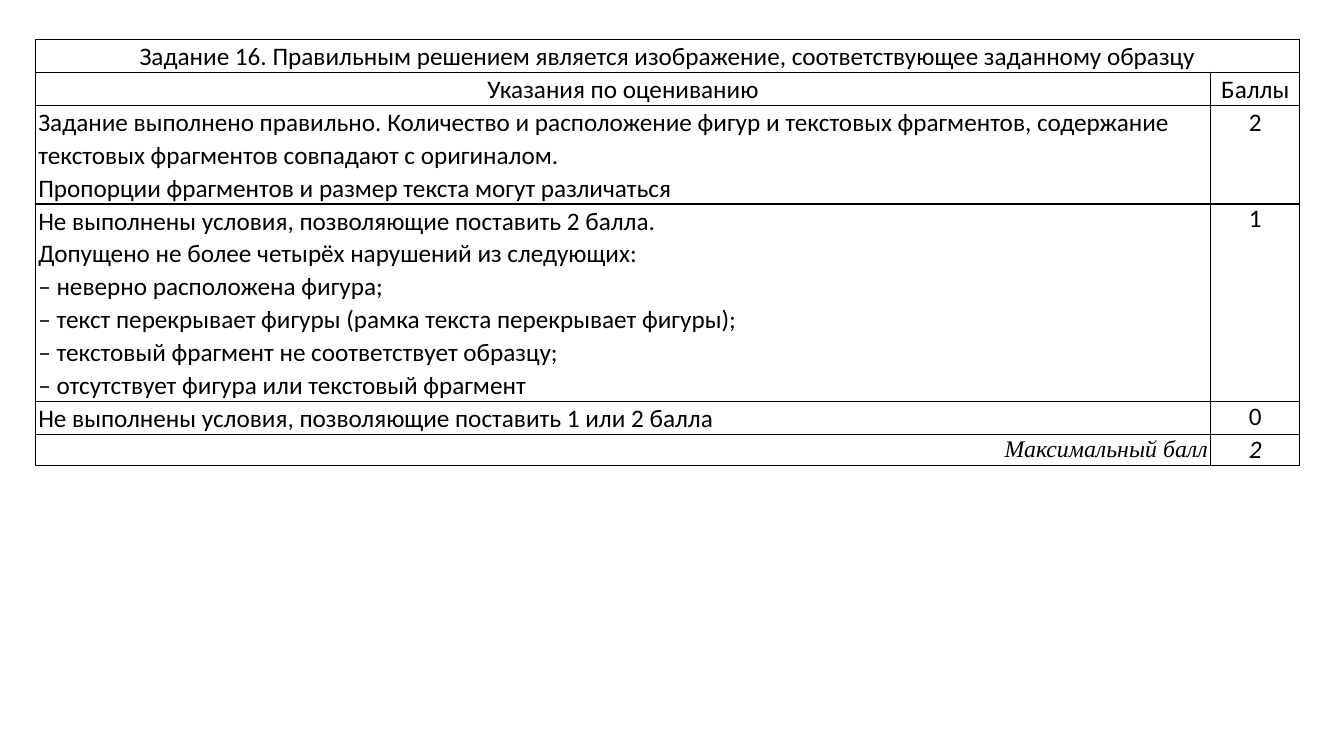
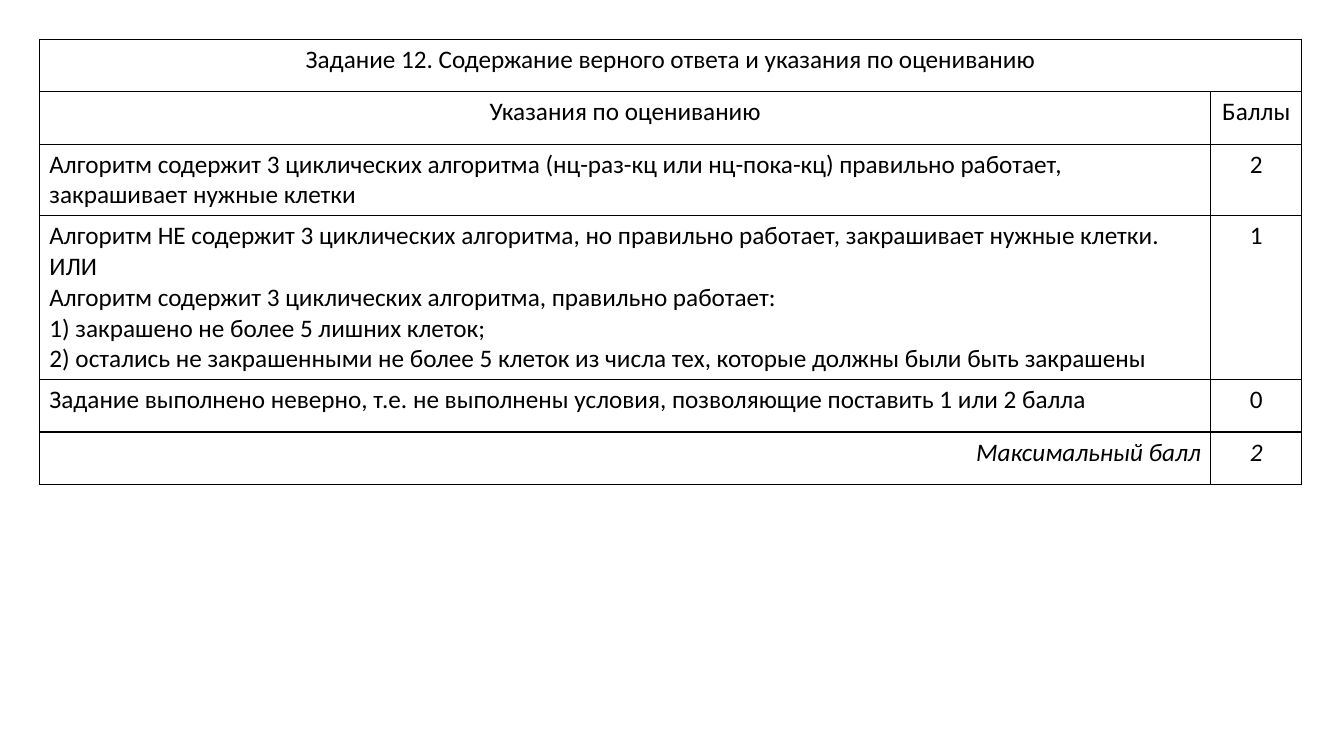
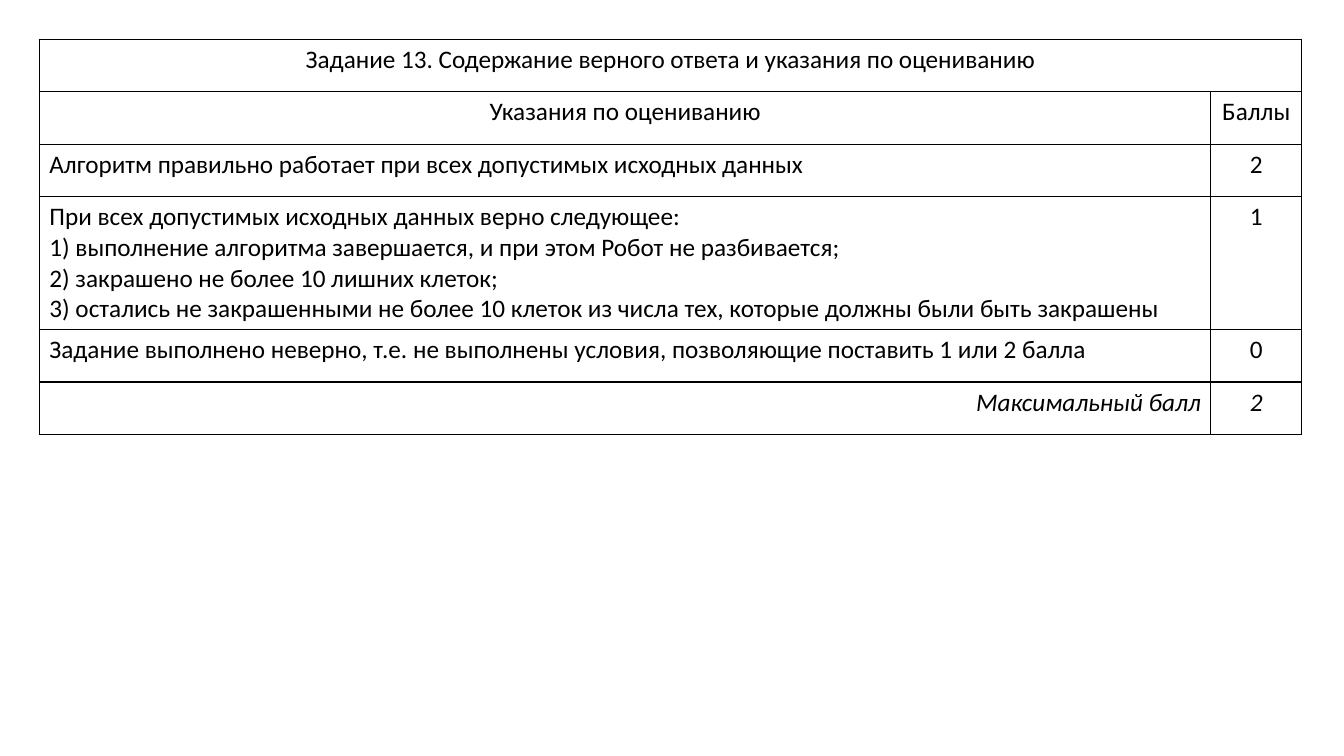
"""Build three slides with scoring tables for exam tasks."""
from dataclasses import dataclass

from lxml import etree
from pptx import Presentation
from pptx.dml.color import RGBColor
from pptx.enum.text import PP_ALIGN
from pptx.oxml.ns import qn
from pptx.util import Inches, Pt

LEFT, CENTER, RIGHT = PP_ALIGN.LEFT, PP_ALIGN.CENTER, PP_ALIGN.RIGHT
COLORS = {"text": "000000", "border": "000000"}
FONT = "Calibri"
TEXT_SIZE = 18
BORDER_WIDTH = 1
BLANK_LAYOUT = 6
TABLE_TOP = 0.39


@dataclass
class TableStyle:
    """Geometry and text settings of one kind of scoring table."""
    left: float
    columns: tuple
    rows: tuple
    side_margin: float = 0.1
    edge_margin: float = 0.05
    line_spacing: float = 1.0
    total_font: str = FONT
    total_size: int = TEXT_SIZE


COMPACT = TableStyle(0.35, (11.66, 0.88), (0.19, 0.19, 0.57, 1.18, 0.22, 0.31),
                     0.03, 0, 1.07, "Times New Roman", 17)
REGULAR = TableStyle(0.39, (11.62, 0.9), (0.52,) * 6)

WRONG_ANSWER = ["Задание выполнено неверно, т.е. не выполнены условия, позволяющие поставить 1 или 2 балла"]

TASKS = [
    (COMPACT, 4.16, "Задание 16. Правильным решением является изображение, соответствующее заданному образцу", [
        ["Задание выполнено правильно. Количество и расположение фигур и текстовых фрагментов, "
         "содержание текстовых фрагментов совпадают с оригиналом.",
         "Пропорции фрагментов и размер текста могут различаться"],
        ["Не выполнены условия, позволяющие поставить 2 балла.",
         "Допущено не более четырёх нарушений из следующих:",
         "– неверно расположена фигура;",
         "– текст перекрывает фигуры (рамка текста перекрывает фигуры);",
         "– текстовый фрагмент не соответствует образцу;",
         "– отсутствует фигура или текстовый фрагмент"],
        ["Не выполнены условия, позволяющие поставить 1 или 2 балла"],
    ]),
    (REGULAR, 4.38, "Задание 12. Содержание верного ответа и указания по оцениванию", [
        ["Алгоритм содержит 3 циклических алгоритма (нц-раз-кц или нц-пока-кц) правильно работает, "
         "закрашивает нужные клетки"],
        ["Алгоритм НЕ содержит 3 циклических алгоритма, но правильно работает, закрашивает нужные клетки.",
         "ИЛИ",
         "Алгоритм содержит 3 циклических алгоритма, правильно работает:",
         "1) закрашено не более 5 лишних клеток;",
         "2) остались не закрашенными не более 5 клеток из числа тех, которые должны были быть закрашены"],
        WRONG_ANSWER,
    ]),
    (REGULAR, 3.9, "Задание 13. Содержание верного ответа и указания по оцениванию", [
        ["Алгоритм правильно работает при всех допустимых исходных данных"],
        ["При всех допустимых исходных данных верно следующее:",
         "1) выполнение алгоритма завершается, и при этом Робот не разбивается;",
         "2) закрашено не более 10 лишних клеток;",
         "3) остались не закрашенными не более 10 клеток из числа тех, которые должны были быть закрашены"],
        WRONG_ANSWER,
    ]),
]


def format_cell(cell, style):
    """Clear the cell fill, set its margins and draw its four borders."""
    cell.fill.background()
    cell.margin_left = cell.margin_right = Inches(style.side_margin)
    cell.margin_top = cell.margin_bottom = Inches(style.edge_margin)
    properties = cell.fill._xPr
    for position, side in enumerate(("lnL", "lnR", "lnT", "lnB")):
        line = etree.Element(qn(f"a:{side}"), w=str(Pt(BORDER_WIDTH)))
        fill = etree.SubElement(line, qn("a:solidFill"))
        etree.SubElement(fill, qn("a:srgbClr"), val=COLORS["border"])
        properties.insert(position, line)


def write_cell(cell, lines, alignment, spacing, italic=False, font=FONT, size=TEXT_SIZE):
    """Write one paragraph per line into the cell."""
    frame = cell.text_frame
    for index, text in enumerate(lines):
        paragraph = frame.add_paragraph() if index else frame.paragraphs[0]
        paragraph.alignment = alignment
        paragraph.line_spacing = spacing
        run = paragraph.add_run()
        run.text = text
        run.font.name = font
        run.font.size = Pt(size)
        run.font.italic = italic
        run.font.color.rgb = RGBColor.from_string(COLORS["text"])


def add_grid(slide, style, height):
    """Add an empty bordered table and return it."""
    frame = slide.shapes.add_table(
        len(style.rows), len(style.columns), Inches(style.left), Inches(TABLE_TOP),
        Inches(sum(style.columns)), Inches(height))
    table = frame.table
    table.first_row = table.horz_banding = False
    for column, width in zip(table.columns, style.columns):
        column.width = Inches(width)
    for row, row_height in zip(table.rows, style.rows):
        row.height = Inches(row_height)
    frame.height = Inches(height)
    for cell in table.iter_cells():
        format_cell(cell, style)
    return table


def add_scoring_table(slide, style, height, title, criteria):
    """Add the scoring table of one task."""
    table = add_grid(slide, style, height)
    spacing = style.line_spacing
    table.cell(0, 0).merge(table.cell(0, 1))
    write_cell(table.cell(0, 0), [title], CENTER, spacing)
    for column, heading in enumerate(("Указания по оцениванию", "Баллы")):
        write_cell(table.cell(1, column), [heading], CENTER, spacing)
    top_score = len(criteria) - 1
    for index, lines in enumerate(criteria):
        write_cell(table.cell(index + 2, 0), lines, LEFT, spacing)
        write_cell(table.cell(index + 2, 1), [str(top_score - index)], CENTER,
                   1.0 if index else spacing)
    total_row = len(criteria) + 2
    write_cell(table.cell(total_row, 0), ["Максимальный балл"], RIGHT, spacing, True,
               style.total_font, style.total_size)
    write_cell(table.cell(total_row, 1), [str(top_score)], CENTER, 1.0, True)


def main():
    """Create the presentation and save it."""
    presentation = Presentation()
    presentation.slide_width = Inches(13.33)
    presentation.slide_height = Inches(7.5)
    for task in TASKS:
        slide = presentation.slides.add_slide(presentation.slide_layouts[BLANK_LAYOUT])
        add_scoring_table(slide, *task)
    presentation.save("out.pptx")


if __name__ == "__main__":
    main()
